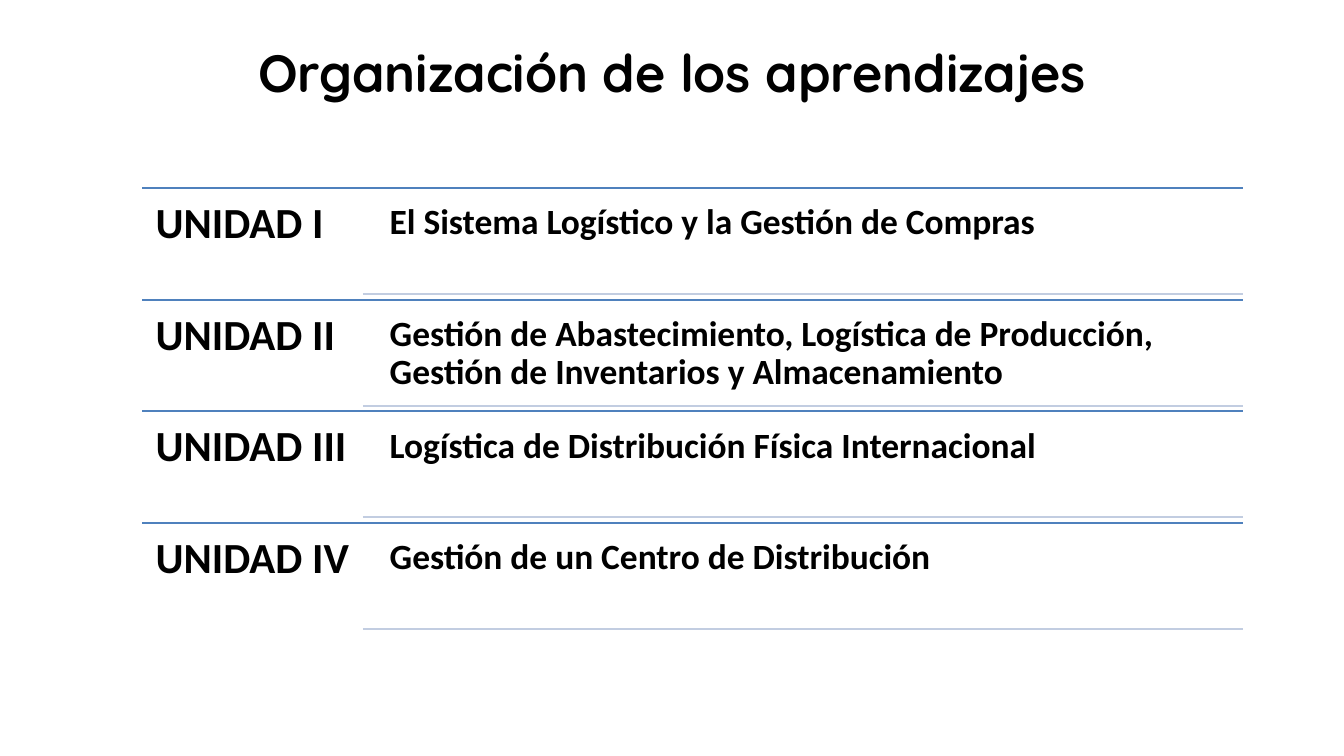
from dataclasses import dataclass

import pptx
import pptx.dml.color
import pptx.enum.shapes
import pptx.enum.text
import pptx.oxml.ns
import pptx.slide
import pptx.util
from lxml import etree

Inches = pptx.util.Inches
RGBColor = pptx.dml.color.RGBColor
Anchor = pptx.enum.text.MSO_ANCHOR
Align = pptx.enum.text.PP_ALIGN

BLACK = RGBColor(0x00, 0x00, 0x00)
BLUE = RGBColor(0x4F, 0x81, 0xBD)
PALE_BLUE = RGBColor(0xC2, 0xCD, 0xE1)

# Grid of the unit list, in inches
LEFT, RIGHT, TOP = 1.06, 9.25, 1.4
ROW_HEIGHT = 0.83
NAME_WIDTH = 1.64
TOPIC_LEFT, TOPIC_OFFSET, TOPIC_HEIGHT = 2.82, 0.04, 0.75
RULE_OFFSET = 0.79


@dataclass
class Unit:
    name: str
    topic: str


@dataclass
class TextStyle:
    font: str
    size: float
    inset: float
    right_inset: float
    align: Align = Align.LEFT
    anchor: Anchor = Anchor.TOP


TITLE = TextStyle("Quicksand", 28, 0.1, 0.1, Align.CENTER, Anchor.MIDDLE)
NAME = TextStyle("Calibri", 23, 0.1, 0.05)
TOPIC = TextStyle("Calibri", 19, 0.08, 0.08)

UNITS = [
    Unit("UNIDAD I", "El Sistema Logístico y la Gestión de Compras"),
    Unit("UNIDAD II", "Gestión de Abastecimiento, Logística de Producción, "
                      "Gestión de Inventarios y Almacenamiento"),
    Unit("UNIDAD III", "Logística de Distribución Física Internacional"),
    Unit("UNIDAD IV", "Gestión de un Centro de Distribución"),
]


def add_text(page: pptx.slide.Slide, text: str, style: TextStyle,
             left: float, top: float, width: float, height: float) -> None:
    box = page.shapes.add_textbox(Inches(left), Inches(top), Inches(width), Inches(height))
    frame = box.text_frame
    frame.word_wrap = True
    frame.vertical_anchor = style.anchor
    frame.margin_left = frame.margin_top = frame.margin_bottom = Inches(style.inset)
    frame.margin_right = Inches(style.right_inset)
    para = frame.paragraphs[0]
    para.alignment = style.align
    para.line_spacing = 0.9
    span = para.add_run()
    span.text = text
    span.font.name = style.font
    span.font.size = pptx.util.Pt(style.size)
    span.font.bold = True
    span.font.color.rgb = BLACK


def add_rule(page: pptx.slide.Slide, left: float, top: float, color: RGBColor) -> None:
    rule = page.shapes.add_connector(
        pptx.enum.shapes.MSO_CONNECTOR.STRAIGHT,
        Inches(left), Inches(top), Inches(RIGHT), Inches(top))
    rule.line.color.rgb = color
    rule.line.width = pptx.util.Pt(1)
    etree.SubElement(rule._element.spPr, pptx.oxml.ns.qn("a:effectLst"))


def add_unit(page: pptx.slide.Slide, unit: Unit, top: float) -> None:
    add_rule(page, LEFT, top, BLUE)
    add_text(page, unit.name, NAME, LEFT, top, NAME_WIDTH, ROW_HEIGHT)
    add_text(page, unit.topic, TOPIC, TOPIC_LEFT, top + TOPIC_OFFSET,
             RIGHT - TOPIC_LEFT, TOPIC_HEIGHT)
    add_rule(page, LEFT + NAME_WIDTH, top + RULE_OFFSET, PALE_BLUE)


def main() -> None:
    deck = pptx.Presentation()
    # Widescreen page, 16:9
    deck.slide_width = Inches(10)
    deck.slide_height = deck.slide_width * 9 // 16
    page = deck.slides.add_slide(deck.slide_layouts[6])

    # Title
    add_text(page, "Organización de los aprendizajes", TITLE, 0.69, 0.02, 8.62, 1.09)

    # Unit list
    for row, unit in enumerate(UNITS):
        add_unit(page, unit, TOP + row * ROW_HEIGHT)

    deck.save("out.pptx")


if __name__ == "__main__":
    main()
